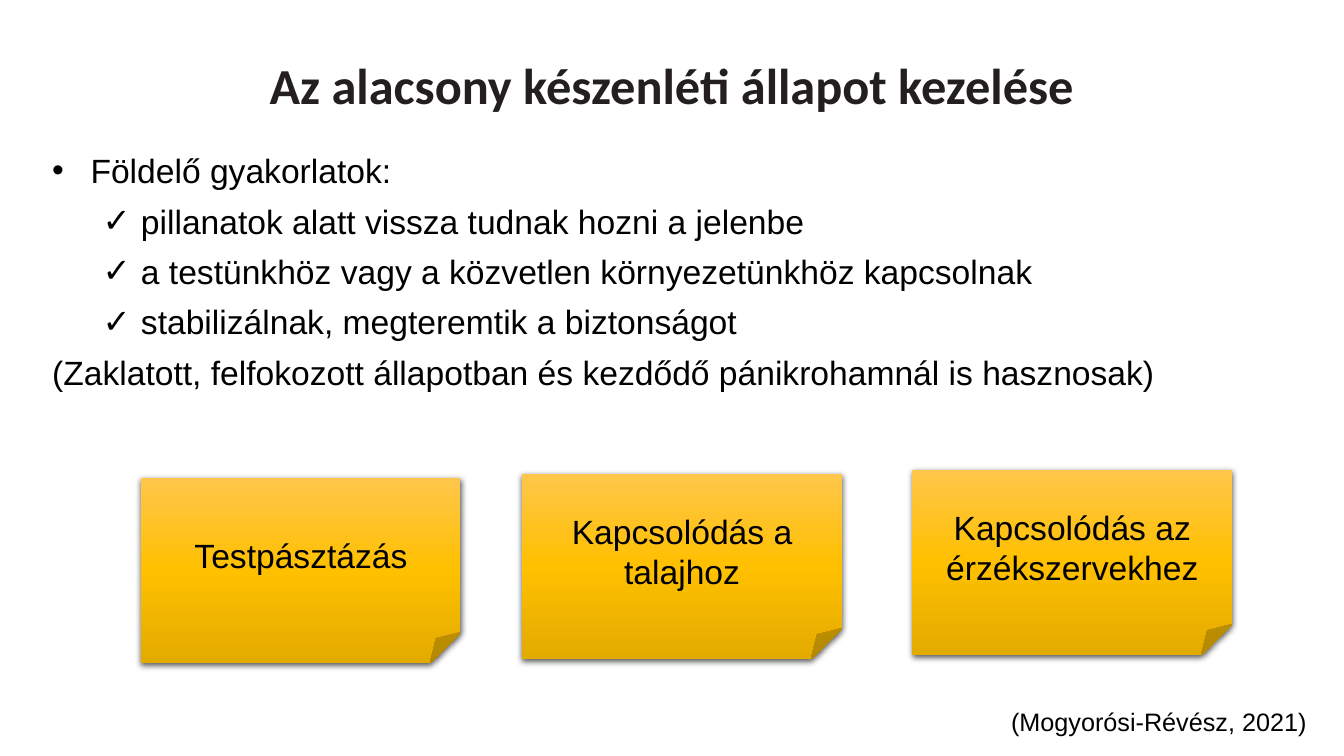
from copy import deepcopy

from lxml import etree
from pptx import Presentation
from pptx import util as u
from pptx.dml.color import RGBColor
from pptx.enum import shapes, text
from pptx.oxml import parse_xml
from pptx.oxml.ns import nsdecls, qn

COLORS = {"title": "231F20", "text": "000000", "shadow": "000000",
          "note_top": "FFC64B", "note_middle": "FFC000", "note_bottom": "E3AB00"}


def style(paragraph, size, color="text", font="Arial", bold=False):
    for run in paragraph.runs:
        run.font.size = u.Pt(size)
        run.font.name = font
        run.font.bold = bold
        run.font.color.rgb = RGBColor.from_string(COLORS[color])


def add_text_box(left, top, width, height):
    box = slide.shapes.add_textbox(*map(u.Inches, (left, top, width, height)))
    box.text_frame.word_wrap = True
    return box.text_frame


prs = Presentation()
prs.slide_width = u.Inches(13.33)
prs.slide_height = u.Inches(7.5)
slide = prs.slides.add_slide(prs.slide_layouts[6])

title = add_text_box(1.23, 0.43, 10.87, 0.76)
title.vertical_anchor = text.MSO_ANCHOR.BOTTOM
title.text = "Az alacsony készenléti állapot kezelése"
title.paragraphs[0].alignment = text.PP_ALIGN.CENTER
style(title.paragraphs[0], 36, "title", "Calibri", True)

exercises = [
    ("Földelő gyakorlatok:", 0, "•"),
    ("pillanatok alatt vissza tudnak hozni a jelenbe", 1, "✓"),
    ("a testünkhöz vagy a közvetlen környezetünkhöz kapcsolnak", 1, "✓"),
    ("stabilizálnak, megteremtik a biztonságot", 1, "✓"),
    ("(Zaklatott, felfokozott állapotban és kezdődő pánikrohamnál is hasznosak)", 0, None),
]
body = add_text_box(0.42, 1.34, 12.5, 4.64)
body.text = "\n".join(line for line, level, bullet in exercises)
for paragraph, (line, level, bullet) in zip(body.paragraphs, exercises):
    paragraph.level = level
    paragraph.line_spacing = 1.25
    style(paragraph, 24)
    if bullet:
        properties = paragraph._p.get_or_add_pPr()
        properties.set("marL", str(u.Inches(0.38 + 0.5 * level)))
        properties.set("indent", str(-u.Inches(0.38)))
        etree.SubElement(properties, qn("a:buFont"), typeface="Arial")
        etree.SubElement(properties, qn("a:buChar"), char=bullet)

notes = [
    ("Testpásztázás", 1.4, 4.74),
    ("Kapcsolódás a talajhoz", 5.18, 4.7),
    ("Kapcsolódás az érzékszervekhez", 9.05, 4.66),
]
for label, left, top in notes:
    note = slide.shapes.add_shape(shapes.MSO_SHAPE.FOLDED_CORNER, u.Inches(left), u.Inches(top),
                                  u.Inches(3.17), u.Inches(1.84))
    note.line.fill.background()
    note.fill.gradient()
    note.fill.gradient_angle = 270
    stop_list = note._element.spPr.find(".//" + qn("a:gsLst"))
    stop_list.append(deepcopy(stop_list[-1]))
    for index, part in enumerate(("note_top", "note_middle", "note_bottom")):
        stop = note.fill.gradient_stops[index]
        stop.position = index / 2
        stop.color.rgb = RGBColor.from_string(COLORS[part])
    note.shadow.inherit = False
    note._element.spPr.find(qn("a:effectLst")).append(parse_xml(
        f'<a:outerShdw {nsdecls("a")} blurRad="{u.Pt(4.5)}" dist="{u.Pt(1.5)}" dir="5400000" '
        f'algn="ctr" rotWithShape="0"><a:srgbClr val="{COLORS["shadow"]}">'
        '<a:alpha val="63000"/></a:srgbClr></a:outerShdw>'))
    note.text_frame.word_wrap = True
    note.text_frame.vertical_anchor = text.MSO_ANCHOR.MIDDLE
    note.text_frame.text = label
    note.text_frame.paragraphs[0].alignment = text.PP_ALIGN.CENTER
    style(note.text_frame.paragraphs[0], 24)

citation = add_text_box(9.93, 6.96, 3.4, 0.4)
citation.text = "(Mogyorósi-Révész, 2021)"
style(citation.paragraphs[0], 18)

prs.save("out.pptx")
